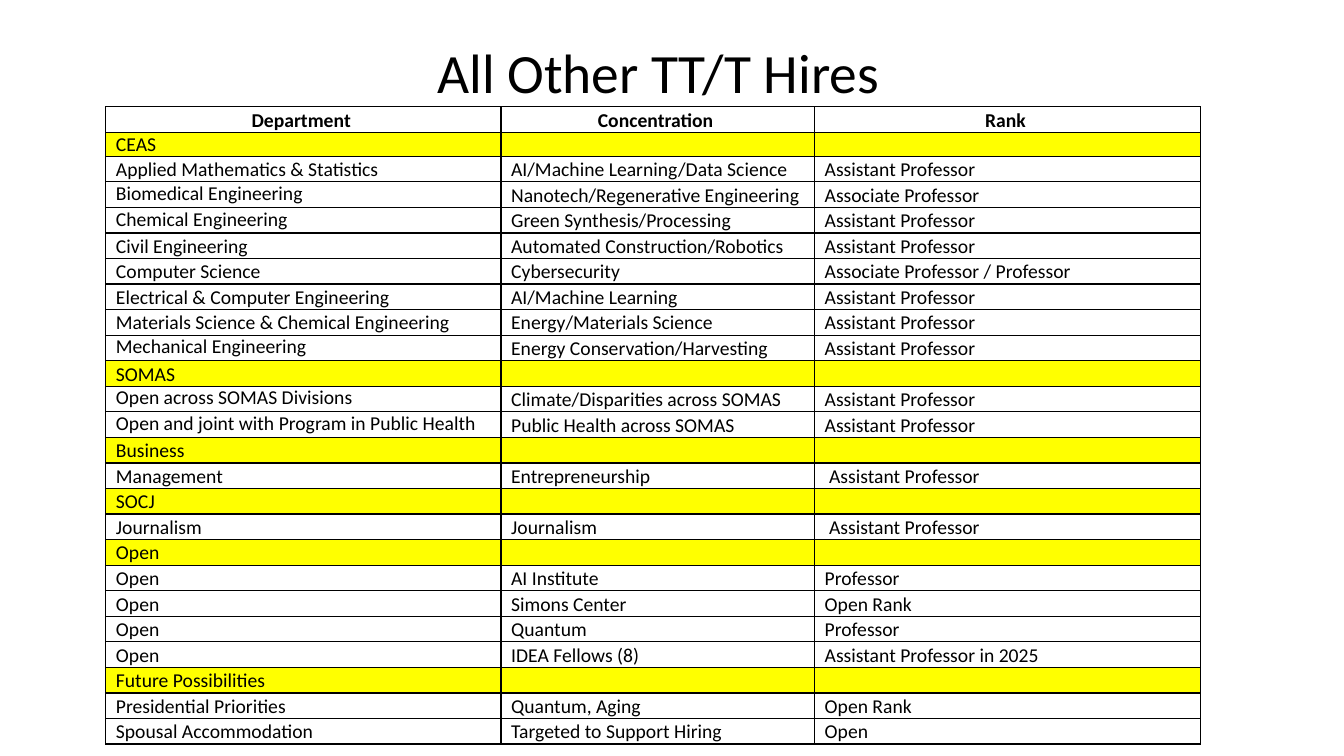
from lxml.etree import SubElement
from pptx import Presentation
from pptx.dml.color import RGBColor
from pptx.enum.text import MSO_ANCHOR as Anchor, PP_ALIGN as Align
from pptx.oxml.ns import qn
from pptx.util import Inches, Pt


def color(value):
    return RGBColor.from_string(value)


def add_span(para, text, size, bold=False):
    span = para.add_run()
    span.text = text
    span.font.name = "Calibri"
    span.font.size = Pt(size)
    span.font.bold = bold
    span.font.color.rgb = color("000000")


hires = [
    ("Department ", "Concentration ", "Rank "),
    ("CEAS",),
    ("Applied Mathematics & Statistics", "AI/Machine Learning/Data Science", "Assistant Professor"),
    ("Biomedical Engineering", "Nanotech/Regenerative Engineering", "Associate Professor"),
    ("Chemical Engineering", "Green Synthesis/Processing", "Assistant Professor"),
    ("Civil Engineering", "Automated Construction/Robotics", "Assistant Professor"),
    ("Computer Science", "Cybersecurity", "Associate Professor / Professor"),
    ("Electrical & Computer Engineering", "AI/Machine Learning", "Assistant Professor"),
    ("Materials Science & Chemical Engineering", "Energy/Materials Science", "Assistant Professor"),
    ("Mechanical Engineering", "Energy Conservation/Harvesting ", "Assistant Professor"),
    ("SOMAS",),
    ("Open across SOMAS Divisions", "Climate/Disparities across SOMAS", "Assistant Professor"),
    ("Open and joint with Program in Public Health", "Public Health across SOMAS", "Assistant Professor"),
    ("Business",),
    ("Management", "Entrepreneurship", " Assistant Professor"),
    ("SOCJ",),
    ("Journalism", "Journalism", " Assistant Professor"),
    ("Open",),
    ("Open", "AI Institute ", "Professor"),
    ("Open", "Simons Center", "Open Rank"),
    ("Open", "Quantum", "Professor"),
    ("Open", "IDEA Fellows (8)", "Assistant Professor in 2025"),
    ("Future Possibilities",),
    ("Presidential Priorities", "Quantum, Aging", "Open Rank"),
    ("Spousal Accommodation", "Targeted to Support Hiring", "Open"),
]
column_widths = [3.92, 3.11, 3.83]
single_spaced_rows = {*range(1, 10), 11, 12}
bottom_rows = {1, 2, 5, 6, 7, 8}

deck = Presentation()
deck.slide_width = Inches(13.33)
deck.slide_height = Inches(7.5)
page = deck.slides.add_slide(deck.slide_layouts[5])

title = page.shapes.title
title.left, title.top = Inches(0.78), Inches(0.4)
title.width, title.height = Inches(11.5), Inches(0.69)
title.text_frame.vertical_anchor = Anchor.MIDDLE
title_para = title.text_frame.paragraphs[0]
title_para.alignment = Align.CENTER
title_para.line_spacing = 0.9
add_span(title_para, "All Other TT/T Hires", 39.6)

table = page.shapes.add_table(
    len(hires), len(column_widths),
    Inches(1.05), Inches(1.06), Inches(10.86), Inches(5.75),
).table
table.horz_banding = False
for column, width in zip(table.columns, column_widths):
    column.width = Inches(width)

for row_index, entries in enumerate(hires):
    table.rows[row_index].height = Inches(0.23)
    is_header = row_index == 0
    is_section = len(entries) == 1
    for column_index in range(len(column_widths)):
        cell = table.cell(row_index, column_index)
        single_spaced = column_index == 0 and row_index in single_spaced_rows
        cell.margin_left = Inches(0.07 if is_header else 0.1)
        cell.margin_right = Inches(0 if single_spaced else 0.07)
        cell.margin_top = cell.margin_bottom = Inches(0)
        at_bottom = column_index == 0 and row_index in bottom_rows
        cell.vertical_anchor = Anchor.BOTTOM if at_bottom else Anchor.TOP

        para = cell.text_frame.paragraphs[0]
        para.alignment = Align.CENTER if is_header else Align.LEFT
        if column_index < len(entries):
            para.line_spacing = 1.0 if single_spaced else 1.07
            add_span(para, entries[column_index], 14, is_header)
        else:
            SubElement(para._p, qn("a:endParaRPr"), sz="1400")

        properties = cell._tc.get_or_add_tcPr()
        for side in ("a:lnL", "a:lnR", "a:lnT", "a:lnB"):
            border = SubElement(properties, qn(side), w=str(Pt(1)))
            border_fill = SubElement(border, qn("a:solidFill"))
            SubElement(border_fill, qn("a:srgbClr"), val="000000")
        if is_section:
            cell.fill.solid()
            cell.fill.fore_color.rgb = color("FFFF00")
        else:
            cell.fill.background()

deck.save("out.pptx")
